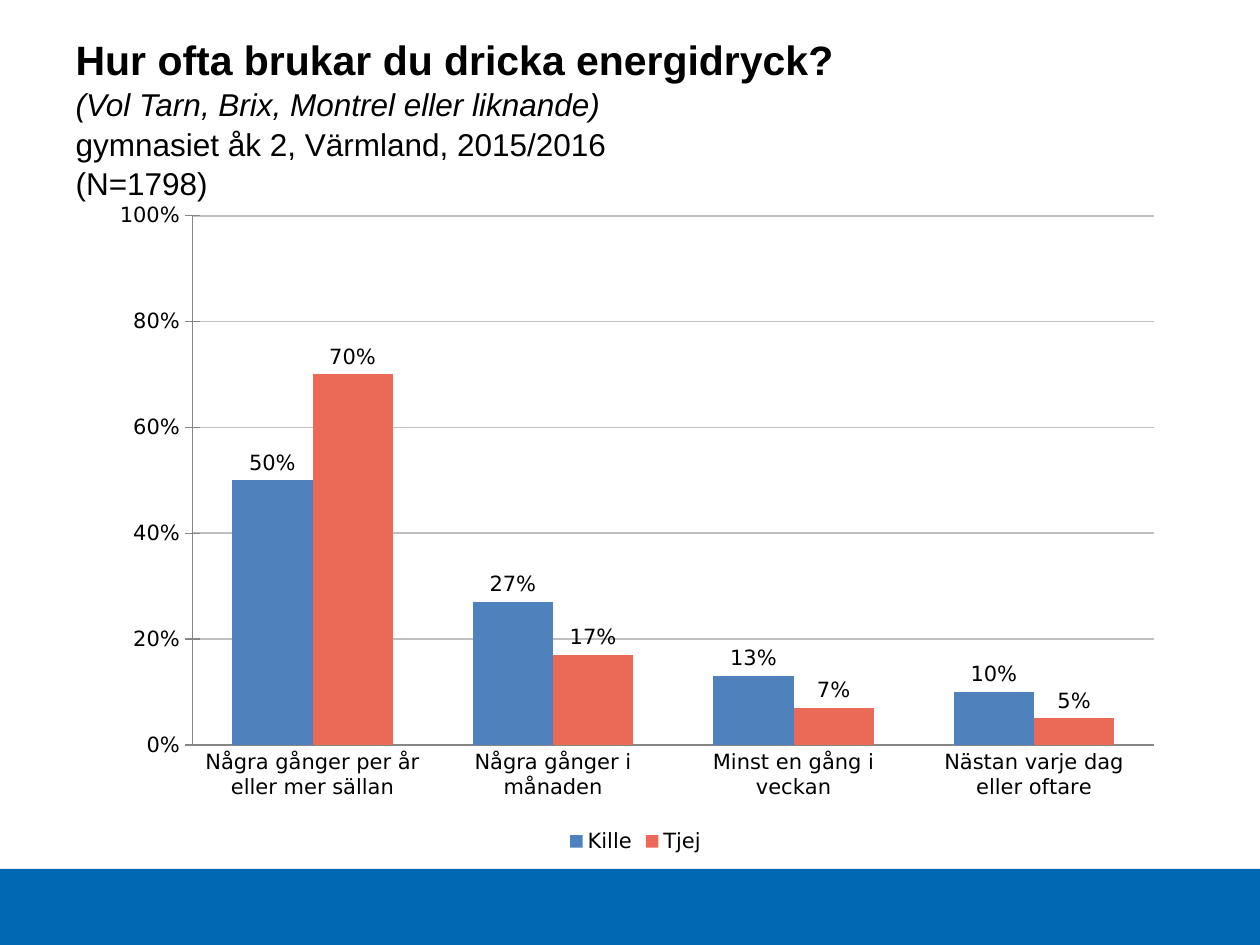
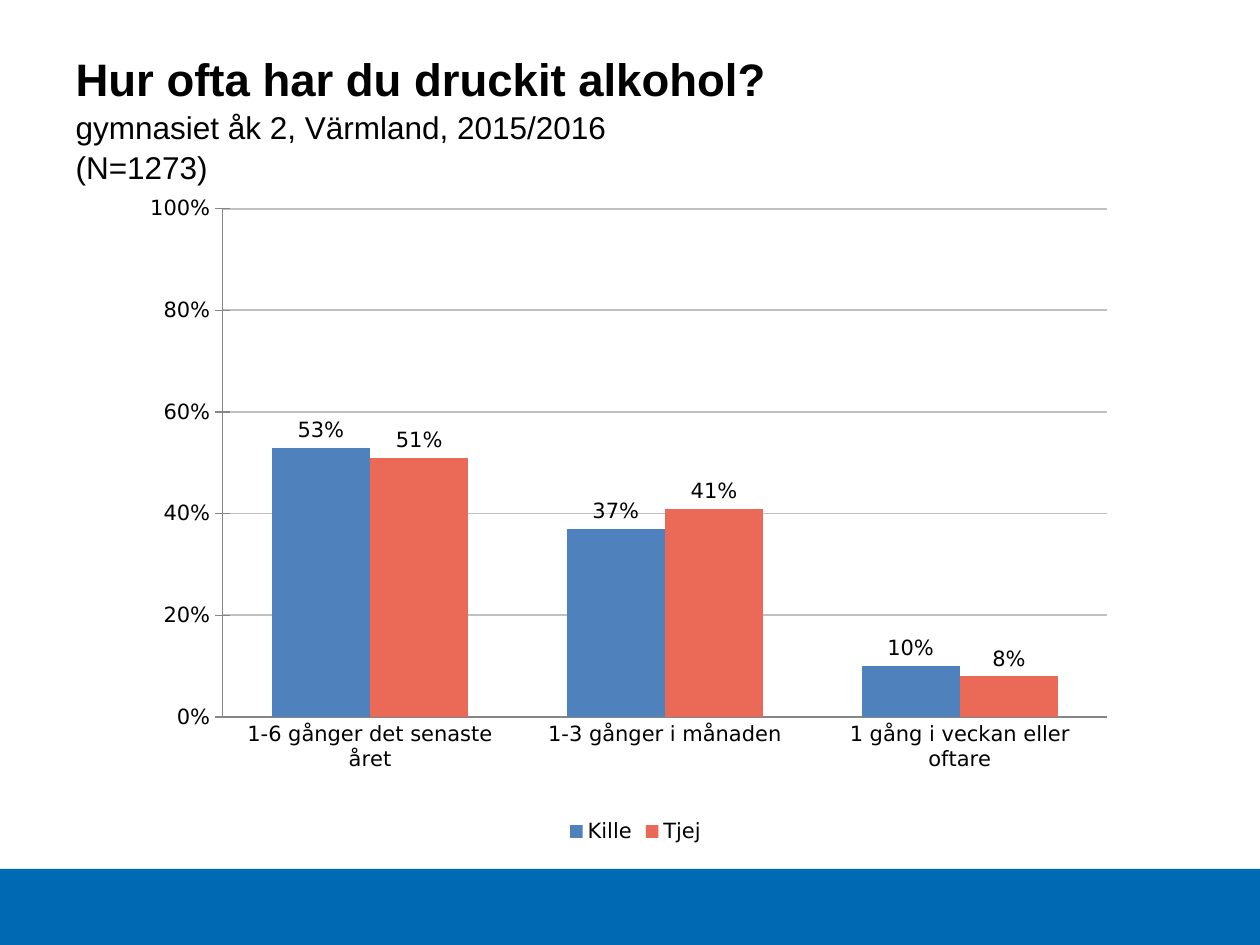
from copy import deepcopy

from lxml import etree
from pptx import Presentation
from pptx.chart.data import CategoryChartData
from pptx.dml.color import RGBColor
from pptx.enum.chart import XL_CHART_TYPE as ChartType
from pptx.enum.chart import XL_LABEL_POSITION as LabelPosition
from pptx.enum.chart import XL_LEGEND_POSITION as LegendPosition
from pptx.enum.chart import XL_TICK_MARK as TickMark
from pptx.enum.shapes import MSO_SHAPE as Shape
from pptx.enum.text import MSO_ANCHOR as Anchor
from pptx.enum.text import MSO_AUTO_SIZE as AutoSize
from pptx.enum.text import PP_ALIGN as Align
from pptx.oxml.ns import qn
from pptx.util import Emu, Pt

EMU_PER_PX = 914400 / 126
SLIDE_W, SLIDE_H = 1260, 945
BAND_TOP = 869
CHART_TOP = 189


def px(length):
    return Emu(round(length * EMU_PER_PX))


def rgb(code):
    return RGBColor.from_string(code)


def format_font(font, size=12, name="DejaVu Sans", color="000000",
                bold=False, italic=False):
    font.size, font.name = Pt(size), name
    font.bold, font.italic = bold, italic
    font.color.rgb = rgb(color)


def write_line(paragraph, text, last=False, **style):
    """Add one line; its break keeps the size of the line."""
    line = paragraph.add_run()
    line.text = text
    format_font(line.font, **style)
    if not last:
        paragraph.add_line_break()
        paragraph._p[-1].append(deepcopy(line._r.get_or_add_rPr()))


class SurveyDeck:
    BLUE_BAND = "0069B4"
    TITLE_FONT = "Arial"
    GRID, AXIS = "C0C0C0", "868686"
    GROUP_COLORS = {"Kille": "4F81BD", "Tjej": "EB6957"}

    def __init__(self):
        self.deck = Presentation()
        self.deck.slide_width, self.deck.slide_height = px(SLIDE_W), px(SLIDE_H)
        self.slide = None

    def new_slide(self):
        self.slide = self.deck.slides.add_slide(self.deck.slide_layouts[5])
        self.band()

    def band(self):
        band = self.slide.shapes.add_shape(
            Shape.RECTANGLE, 0, px(BAND_TOP), px(SLIDE_W), px(SLIDE_H - BAND_TOP))
        band.shadow.inherit = False
        band.fill.solid()
        band.fill.fore_color.rgb = rgb(self.BLUE_BAND)
        band.line.fill.background()

    def title(self, question, details, size):
        title = self.slide.shapes.title
        title.left, title.top, title.width, title.height = map(px, (63, 38, 1091, 158))
        frame = title.text_frame
        frame.auto_size = AutoSize.NONE
        frame.word_wrap = True
        frame.vertical_anchor = Anchor.MIDDLE
        heading = frame.paragraphs[0]
        heading.alignment = Align.LEFT
        heading.line_spacing = 1.05
        write_line(heading, question, size=size, name=self.TITLE_FONT, bold=True)
        for number, detail in enumerate(details, 1):
            is_example = detail.endswith("liknande)")
            write_line(heading, detail, last=number == len(details), size=18,
                       name=self.TITLE_FONT, italic=is_example)

    def chart(self, left, width, height, answers, shares, plot_area):
        data = CategoryChartData(number_format="0%")
        data.categories = answers
        for group, values in shares.items():
            data.add_series(group, values)
        chart = self.slide.shapes.add_chart(
            ChartType.COLUMN_CLUSTERED, px(left), px(CHART_TOP),
            px(width), px(height), data).chart
        format_font(chart.font)
        chart.has_title = False
        chart.has_legend = True
        chart.legend.position = LegendPosition.BOTTOM
        chart.legend.include_in_layout = False
        format_font(chart.legend.font)
        self.axes(chart)
        self.columns(chart.plots[0])
        self.place_plot(chart, plot_area)

    def axes(self, chart):
        share_axis, answer_axis = chart.value_axis, chart.category_axis
        share_axis.minimum_scale, share_axis.maximum_scale = 0, 1
        share_axis.major_unit = 0.2
        share_axis.has_major_gridlines = True
        grid = share_axis.major_gridlines.format.line
        grid.color.rgb, grid.width = rgb(self.GRID), Pt(1)
        share_axis.tick_labels.number_format = "0%"
        share_axis.tick_labels.number_format_is_linked = False
        for axis, tick in ((share_axis, TickMark.CROSS), (answer_axis, TickMark.NONE)):
            axis.major_tick_mark, axis.minor_tick_mark = tick, TickMark.NONE
            axis.format.line.color.rgb = rgb(self.AXIS)
            axis.format.line.width = Pt(0.75)
            format_font(axis.tick_labels.font)

    def columns(self, plot):
        plot.gap_width, plot.overlap = 100, 0
        plot.vary_by_categories = False
        for group in plot.series:
            group.format.fill.solid()
            group.format.fill.fore_color.rgb = rgb(self.GROUP_COLORS[group.name])
            group.invert_if_negative = False
            labels = group.data_labels
            labels.show_value = True
            labels.number_format, labels.number_format_is_linked = "0%", False
            labels.position = LabelPosition.OUTSIDE_END
            format_font(labels.font)

    def place_plot(self, chart, plot_area):
        """Fix the inner plot area as fractions of the chart."""
        area = chart._chartSpace.find(".//" + qn("c:plotArea"))
        for automatic in area.findall(qn("c:layout")):
            area.remove(automatic)
        layout = etree.Element(qn("c:layout"))
        manual = etree.SubElement(layout, qn("c:manualLayout"))
        settings = [("layoutTarget", "inner"), ("xMode", "edge"), ("yMode", "edge")]
        settings += zip("xywh", plot_area)
        for tag, value in settings:
            etree.SubElement(manual, qn("c:" + tag)).set("val", str(value))
        area.insert(0, layout)

    def save(self):
        self.deck.save("out.pptx")


def main():
    survey = SurveyDeck()
    school = "gymnasiet åk 2, Värmland, 2015/2016"

    # Energy drinks
    survey.new_slide()
    survey.title("Hur ofta brukar du dricka energidryck?",
                 ["(Vol Tarn, Brix, Montrel eller liknande)", school, "(N=1798)"],
                 size=23.4)
    survey.chart(
        95, 1081, 670,
        ["Några gånger per år eller mer sällan", "Några gånger i månaden",
         "Minst en gång i veckan", "Nästan varje dag eller oftare"],
        {"Kille": (0.5, 0.27, 0.13, 0.1), "Tjej": (0.7, 0.17, 0.07, 0.05)},
        plot_area=(0.09, 0.04, 0.89, 0.79))

    # Alcohol
    survey.new_slide()
    survey.title("Hur ofta har du druckit alkohol?", [school, "(N=1273)"], size=26)
    survey.chart(
        144, 983, 660,
        ["1-6 gånger det senaste året", "1-3 gånger i månaden",
         "1 gång i veckan eller oftare"],
        {"Kille": (0.53, 0.37, 0.1), "Tjej": (0.51, 0.41, 0.08)},
        plot_area=(0.08, 0.03, 0.9, 0.77))

    survey.save()


if __name__ == "__main__":
    main()
